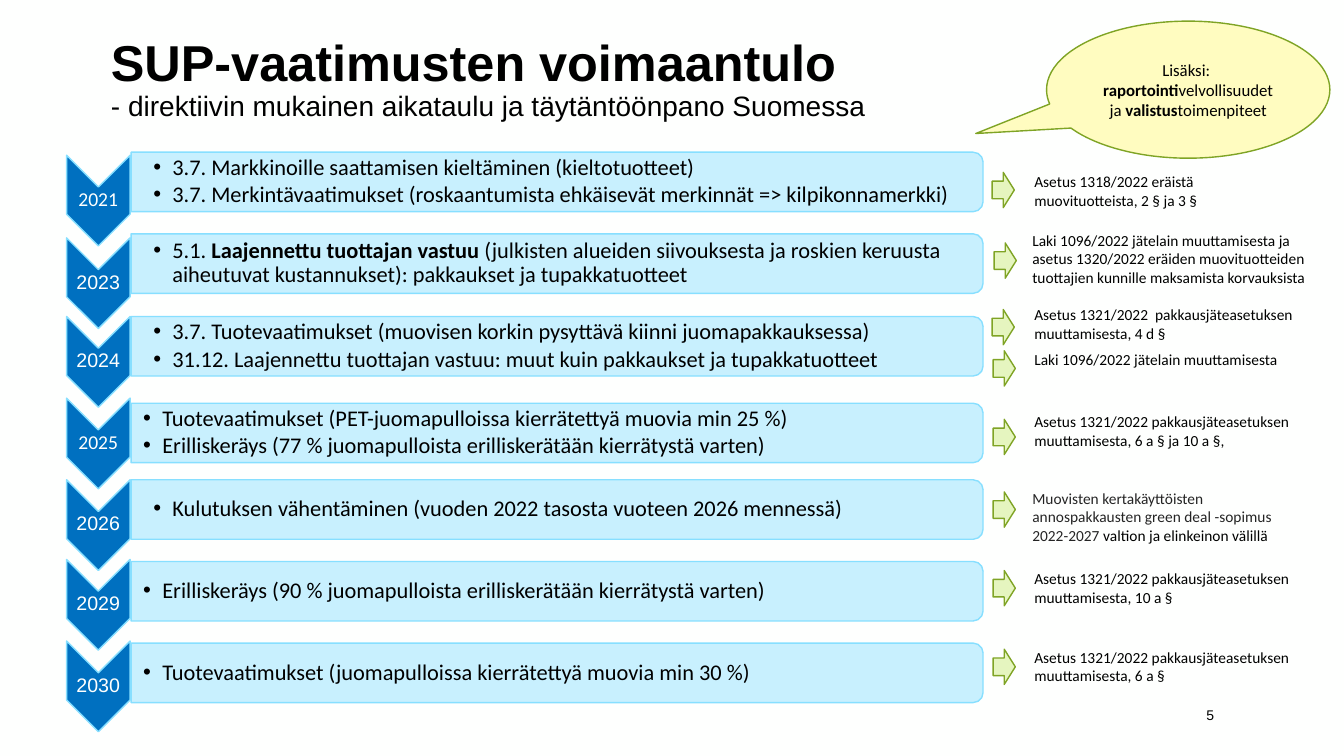
from lxml import etree
from pptx import Presentation
from pptx import util as u
from pptx.dml.color import RGBColor
from pptx.enum import shapes, text
from pptx.oxml.ns import qn

PX = 9144  # 100 px to the inch

# Content: text between asterisks takes the second style
TITLE = "SUP-vaatimusten voimaantulo "
SUB = "- direktiivin mukainen aikataulu ja täytäntöönpano Suomessa"
PAGE = "5"

# year, year font, chevron top, bar top, left inset, lines
STEPS = [
    ("2021", "Calibri", 154, 151, 22, [
        "3.7. Markkinoille saattamisen kieltäminen (kieltotuotteet)",
        "3.7. Merkintävaatimukset (roskaantumista ehkäisevät merkinnät => kilpikonnamerkki)"]),
    ("2023", "Arial", 236, 232, 22, [
        "5.1. *Laajennettu tuottajan vastuu *(julkisten alueiden siivouksesta ja roskien "
        "keruusta aiheutuvat kustannukset): pakkaukset ja tupakkatuotteet"]),
    ("2024", "Arial", 314, 314, 22, [
        "3.7. Tuotevaatimukset (muovisen korkin pysyttävä kiinni juomapakkauksessa)",
        "31.12. Laajennettu tuottajan vastuu: muut kuin pakkaukset ja tupakkatuotteet"]),
    ("2025", "Calibri", 395, 400, 12, [
        "Tuotevaatimukset (PET-juomapulloissa kierrätettyä muovia min 25 %)",
        "Erilliskeräys (77 % juomapulloista erilliskerätään kierrätystä varten)"]),
    ("2026", "Arial", 476, 476, 22, [
        "Kulutuksen vähentäminen (vuoden 2022 tasosta vuoteen 2026 mennessä)"]),
    ("2029", "Arial", 555, 557, 12, [
        "Erilliskeräys (90 % juomapulloista erilliskerätään kierrätystä varten)"]),
    ("2030", "Arial", 636, 638, 12, [
        "Tuotevaatimukset (juomapulloissa kierrätettyä muovia min 30 %)"]),
]

# arrow left and top, note left, top, width and height, text
NOTES = [
    (984, 171, 1016, 166, 281, 47, "Asetus 1318/2022 eräistä muovituotteista, 2 § ja 3 §"),
    (986, 241, 1014, 224, 309, 66,
     "Laki 1096/2022 jätelain muuttamisesta ja asetus 1320/2022 eräiden muovituotteiden "
     "tuottajien kunnille maksamista korvauksista"),
    (984, 307, 1016, 298, 330, 47,
     "Asetus 1321/2022  pakkausjäteasetuksen muuttamisesta, 4 d §"),
    (985, 348, 1016, 342, 312, 29, "Laki 1096/2022 jätelain muuttamisesta"),
    (985, 416, 1016, 404, 330, 47,
     "Asetus 1321/2022 pakkausjäteasetuksen muuttamisesta, 6 a § ja 10 a §,"),
    (985, 488, 1014, 480, 294, 66,
     "*Muovisten kertakäyttöisten annospakkausten green deal -sopimus 2022-2027 *"
     "valtion ja elinkeinon välillä"),
    (985, 566, 1016, 560, 330, 47,
     "Asetus 1321/2022 pakkausjäteasetuksen muuttamisesta, 10 a §"),
    (985, 644, 1016, 638, 329, 47,
     "Asetus 1321/2022 pakkausjäteasetuksen muuttamisesta, 6 a §"),
]
BUBBLE = ["Lisäksi: ", "*raportointi*velvollisuudet ja *valistus*toimenpiteet"]

LEFT, MID, RIGHT = text.PP_ALIGN.LEFT, text.PP_ALIGN.CENTER, text.PP_ALIGN.RIGHT
KIND = shapes.MSO_SHAPE


def rgb(code):
    return RGBColor.from_string(code)


def area(x, y, w, h):
    return [u.Emu(round(v * PX)) for v in (x, y, w, h)]


def draw(kind, box, fill, line):
    shape = slide.shapes.add_shape(kind, *area(*box))
    shape.shadow.inherit = False
    shape.fill.solid()
    shape.fill.fore_color.rgb = rgb(fill)
    shape.line.color.rgb = rgb(line)
    shape.line.width = u.Pt(1)
    return shape


def turn(kind, x, y, w, h, fill):
    """Draw a shape turned by 90 degrees that covers the given box."""
    shape = draw(kind, (x + (w - h) / 2, y + (h - w) / 2, h, w), fill, "87DFFF")
    shape.rotation = 90
    return shape


def dot(para):
    props = para._p.get_or_add_pPr()
    props.set("marL", str(19 * PX))
    props.set("indent", str(-19 * PX))
    etree.SubElement(props, qn("a:buFont")).set("typeface", "Arial")
    etree.SubElement(props, qn("a:buChar")).set("char", "•")


def write(frame, lines, size, font="Calibri", color="000000", align=LEFT,
          mid=True, inset=None, lead=None, after=None, bullet=False, tint=None):
    frame.word_wrap = True
    frame.auto_size = text.MSO_AUTO_SIZE.NONE
    frame.vertical_anchor = text.MSO_ANCHOR.MIDDLE if mid else text.MSO_ANCHOR.TOP
    if inset:
        (frame.margin_left, frame.margin_top,
         frame.margin_right, frame.margin_bottom) = area(*inset)
    for i, line in enumerate(lines):
        para = frame.paragraphs[0] if i == 0 else frame.add_paragraph()
        para.alignment = align
        if lead:
            para.line_spacing = lead
        if after:
            para.space_after = u.Pt(after)
        if bullet:
            dot(para)
        para.font.size = u.Pt(size)
        para.font.name = font
        para.font.color.rgb = rgb(color)
        for j, part in enumerate(line.split("*")):
            if not part:
                continue
            run = para.add_run()
            run.text = part
            if j % 2 and tint:
                run.font.color.rgb = rgb(tint)
            elif j % 2:
                run.font.bold = True


def label(box, lines, size, **style):
    frame = slide.shapes.add_textbox(*area(*box)).text_frame
    write(frame, lines, size, **style)


deck = Presentation()
deck.slide_width, deck.slide_height = u.Inches(13.33), u.Inches(7.5)
slide = deck.slides.add_slide(deck.slide_layouts[5])
slide.background.fill.solid()
slide.background.fill.fore_color.rgb = rgb("FEFFFE")

# Title and subtitle
head = slide.shapes.title
head.left, head.top, head.width, head.height = area(100, 19, 1133, 122)
write(head.text_frame, [TITLE], 36, font="Arial", lead=0.9)
para = head.text_frame.paragraphs[0]
para.runs[0].font.bold = True
para.add_line_break()
sub = para.add_run()
sub.text = SUB
sub.font.size = u.Pt(20)
sub.font.bold = False

# Timeline
for year, font, top, bar, left, lines in STEPS:
    turn(KIND.CHEVRON, 66, top, 63, 90, "0070C0")
    label((66, top + 31, 63, 27), [year], 14, font=font, color="FEFFFE",
          align=MID, inset=(1, 1, 1, 1), lead=0.9)
    band = turn(KIND.ROUND_2_SAME_RECTANGLE, 130, bar, 845, 59, "C3EFFF")
    tone = band.fill._xPr.find(".//" + qn("a:srgbClr"))
    etree.SubElement(tone, qn("a:alpha")).set("val", "90000")
    label((130, bar + 3, 842, 53), lines, 16, inset=(left, 2, 2, 2),
          lead=0.9, after=2.4, bullet=True)

# Legal notes and arrows
for ax, ay, x, y, w, h, note in NOTES:
    draw(KIND.RIGHT_ARROW, (ax, ay, 22, 35), "E5F5BF", "7FA425")
    label((x, y, w, h), [note], 11, mid=False, tint="242424")

# Callout
bubble = draw(KIND.OVAL_CALLOUT, (1038, 21, 281, 136), "FFFCC0", "7FA425")
bubble.adjustments[0], bubble.adjustments[1] = -0.75, 0.32
write(bubble.text_frame, BUBBLE, 12, align=MID)

# Page number
label((914, 689, 300, 40), [PAGE], 10, font="Arial", align=RIGHT)

deck.save("out.pptx")
